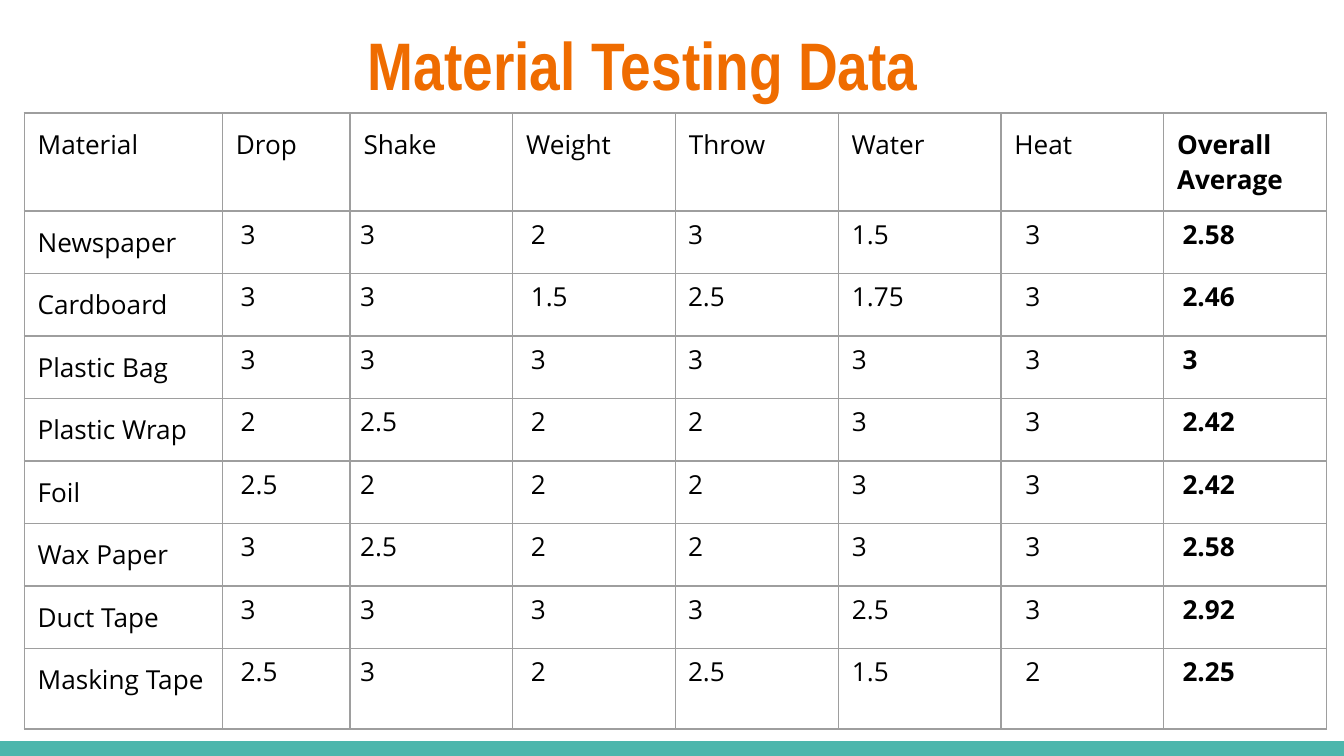
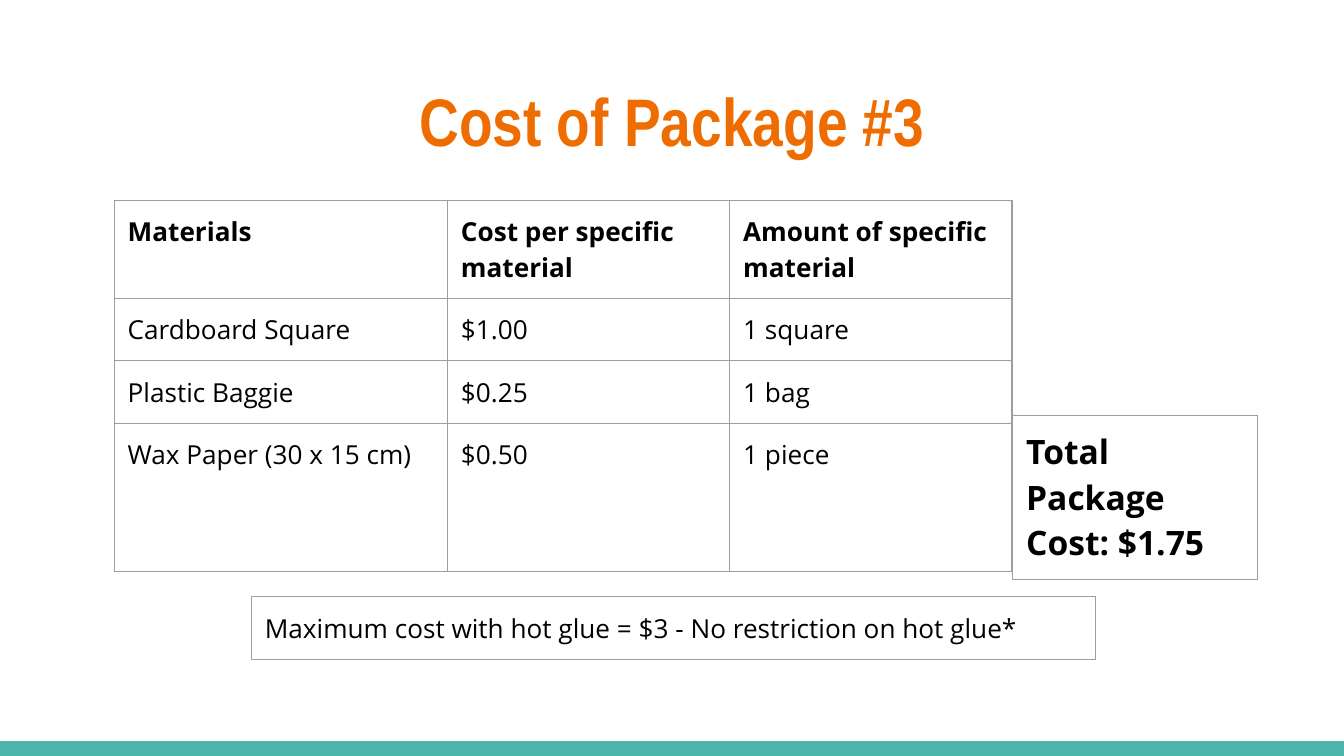
import lxml.etree
import pptx
import pptx.dml.color
import pptx.enum.shapes
import pptx.enum.text
import pptx.oxml.ns
import pptx.util

WIDTH = pptx.util.Inches(10)
HEIGHT = pptx.util.Emu(WIDTH * 9 // 16)
GRID_COLUMNS = 100
TEAL, ORANGE, GREY, BLACK = "4DB6AC", "EF6C00", "9E9E9E", "000000"
TITLE_FONT, BODY_FONT = "Arial Narrow", "Open Sans"
LINE_ROW, WRAPPED_ROW = 4.65, 7.3

MATERIALS = ["Newspaper", "Cardboard", "Plastic Bag", "Plastic Wrap",
             "Foil", "Wax Paper", "Duct Tape", "Masking Tape"]
TESTS = ["Material", "Drop", "Shake", "Weight", "Throw", "Water", "Heat",
         "Overall Average"]
SCORES = [
    ["3", "3", "2", "3", "1.5", "3", "2.58"],
    ["3", "3", "1.5", "2.5", "1.75", "3", "2.46"],
    ["3", "3", "3", "3", "3", "3", "3"],
    ["2", "2.5", "2", "2", "3", "3", "2.42"],
    ["2.5", "2", "2", "2", "3", "3", "2.42"],
    ["3", "2.5", "2", "2", "3", "3", "2.58"],
    ["3", "3", "3", "3", "2.5", "3", "2.92"],
    ["2.5", "3", "2", "2.5", "1.5", "2", "2.25"],
]
COSTS = [
    ["Materials", "Cost per specific material", "Amount of specific material"],
    ["Cardboard Square", "$1.00", "1 square"],
    ["Plastic Baggie", "$0.25", "1 bag"],
    ["Wax Paper (30 x 15 cm)", "$0.50", "1 piece"],
]


def grid(count):
    """Return the length of a number of square grid units."""
    return pptx.util.Emu(round(WIDTH * count / GRID_COLUMNS))


def rgb(value):
    """Turn a hex string into a colour."""
    return pptx.dml.color.RGBColor.from_string(value)


def write(frame, text, font, size, colour, bold):
    """Write one paragraph into a text frame and return it."""
    frame.word_wrap = True
    paragraph = frame.paragraphs[0]
    paragraph.text = text
    paragraph.font.name = font
    paragraph.font.size = pptx.util.Pt(size)
    paragraph.font.bold = bold
    paragraph.font.color.rgb = rgb(colour)
    return paragraph


def set_margins(box, margin):
    """Give a cell or text frame the same margin on every side."""
    box.margin_left = box.margin_right = margin
    box.margin_top = box.margin_bottom = margin


def set_borders(cell, sides):
    """Draw grey lines on the named sides of a cell and none on the others."""
    properties = cell._tc.get_or_add_tcPr()
    qn = pptx.oxml.ns.qn
    for side in "LRTB":
        line = lxml.etree.SubElement(properties, qn(f"a:ln{side}"),
                                     w=str(pptx.util.Pt(0.75)))
        if side in sides:
            fill = lxml.etree.SubElement(line, qn("a:solidFill"))
            lxml.etree.SubElement(fill, qn("a:srgbClr"), val=GREY)
        else:
            lxml.etree.SubElement(line, qn("a:noFill"))


def add_grid_table(slide, left, top, widths, heights, texts, size=14,
                   bold=lambda row, column: False,
                   sides=lambda row: "LRTB"):
    """Add an unfilled table; bold and sides choose the style of each cell."""
    frame = slide.shapes.add_table(
        len(heights), len(widths), grid(left), grid(top),
        grid(sum(widths)), grid(sum(heights)))
    table = frame.table
    table.first_row = table.horz_banding = False
    for column, width in zip(table.columns, widths):
        column.width = grid(width)
    for r, (height, row_texts) in enumerate(zip(heights, texts)):
        table.rows[r].height = grid(height)
        for c, text in enumerate(row_texts):
            cell = table.cell(r, c)
            set_borders(cell, sides(r))
            cell.fill.background()
            set_margins(cell, grid(1) if text else 0)
            if text:
                write(cell.text_frame, text, BODY_FONT, size, BLACK, bold(r, c))


def add_titled_slide(deck, title, left, top):
    """Add a slide with the teal bottom band and an orange title."""
    slide = deck.slides.add_slide(deck.slide_layouts[6])
    band_height = grid(1.1)
    band = slide.shapes.add_shape(
        pptx.enum.shapes.MSO_SHAPE.RECTANGLE, 0, HEIGHT - band_height,
        WIDTH, band_height)
    band.shadow.inherit = False
    band.fill.solid()
    band.fill.fore_color.rgb = rgb(TEAL)
    band.line.fill.background()
    heading = slide.shapes.add_textbox(
        grid(left), grid(top), grid(93.2), grid(7.7)).text_frame
    set_margins(heading, grid(1))
    paragraph = write(heading, title, TITLE_FONT, 36, ORANGE, True)
    paragraph.alignment = pptx.enum.text.PP_ALIGN.CENTER
    return slide


def add_testing_slide(deck):
    """Add the material grid with the scores laid over it."""
    slide = add_titled_slide(deck, "Material Testing Data ", 1.8, 0.7)
    last = len(TESTS) - 1
    names = [TESTS] + [[name] + [""] * last for name in MATERIALS]
    add_grid_table(
        slide, 1.8, 8.4, [14.75, 9.5] + [12.11] * 6,
        [WRAPPED_ROW] + [LINE_ROW] * 7 + [6], names,
        bold=lambda row, column: column == last)
    add_grid_table(
        slide, 16.9, 15.1, [8.9, 12.7, 11.7, 12.2, 12.9, 11.7, 11.7],
        [LINE_ROW] * len(SCORES), SCORES,
        bold=lambda row, column: column == last - 1, sides=lambda row: "")


def add_cost_slide(deck):
    """Add the cost table, its total at the side and the note below."""
    slide = add_titled_slide(deck, "Cost of Package #3", 3.4, 4.9)
    add_grid_table(
        slide, 8.5, 14.9, [24.8, 21, 21],
        [WRAPPED_ROW, LINE_ROW, LINE_ROW, 11], COSTS,
        bold=lambda row, column: row == 0)
    add_grid_table(
        slide, 18.7, 44.4, [62.8], [LINE_ROW],
        [["Maximum cost with hot glue = $3 - No restriction on hot glue*"]])
    add_grid_table(
        slide, 75.35, 14.9, [18.2], [6.7, LINE_ROW, LINE_ROW, 12.2],
        [[""], [""], [""], ["Total Package Cost: $1.75"]], size=18,
        bold=lambda row, column: True,
        sides=lambda row: ["L", "L", "LB", "LRTB"][row])


def main():
    """Build and save the presentation."""
    deck = pptx.Presentation()
    deck.slide_width, deck.slide_height = WIDTH, HEIGHT
    add_testing_slide(deck)
    add_cost_slide(deck)
    deck.save("out.pptx")


if __name__ == "__main__":
    main()
